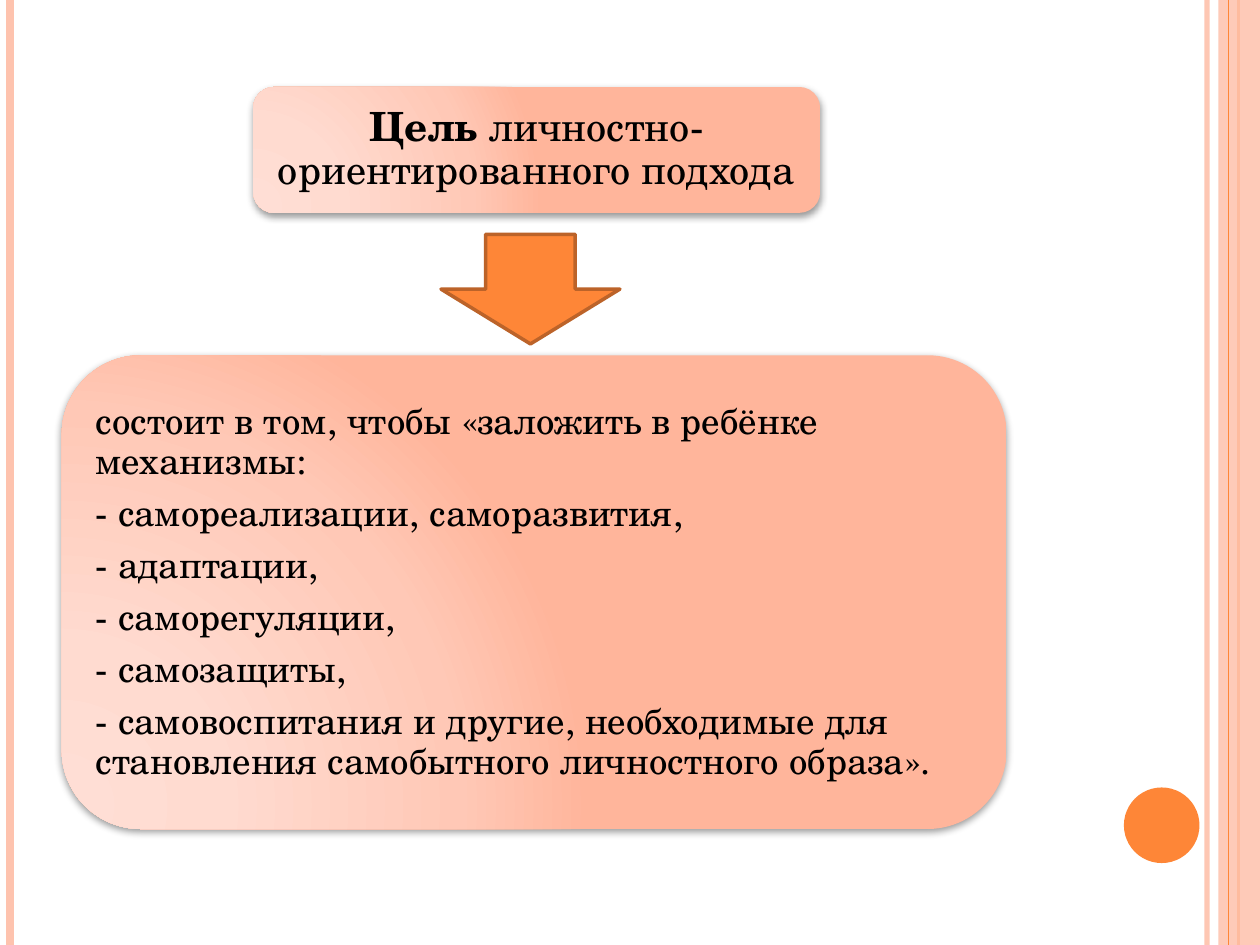
from dataclasses import dataclass

from lxml.etree import SubElement
from pptx import Presentation
from pptx.dml.color import RGBColor
from pptx.enum.shapes import MSO_CONNECTOR, MSO_SHAPE as Preset
from pptx.enum.text import MSO_ANCHOR, PP_ALIGN as Align
from pptx.oxml.ns import qn
from pptx.util import Inches, Pt


@dataclass(frozen=True)
class Theme:
    font: str = "TeX Gyre Schola"
    text: str = "000000"
    shadow: str = "000000"
    orange: str = "FE8637"
    outline: str = "BC6329"
    pink: str = "FEC3AE"
    gradient: tuple = ((0, "FFDED5"), (30, "FFDBD0"), (75, "FFC8B6"), (100, "FFB59B"))
    heading_size: float = 23
    body_size: float = 21
    line_spacing: float = 0.9
    space_after: float = 7.1


@dataclass(frozen=True)
class Box:
    left: float
    top: float
    width: float
    height: float

    def lengths(self) -> list:
        return [Inches(v) for v in (self.left, self.top, self.width, self.height)]


@dataclass(frozen=True)
class Stripe:
    x: float
    color: str
    width: float
    opacity: int = 100


@dataclass(frozen=True)
class Panel:
    box: Box
    text_box: Box
    inset: float
    paragraphs: list
    size: float
    align: Align


THEME = Theme()
SLIDE_WIDTH, SLIDE_HEIGHT = 10, 7.5

STRIPES = [
    Stripe(9.58, THEME.pink, 3, 93),
    Stripe(0.08, THEME.pink, 4.5),
    Stripe(9.83, THEME.orange, 1.5),
]
INNER_STRIPE = Stripe(9.75, THEME.orange, 0.75)

# Each paragraph is a list of (text, bold) runs
HEADING = [[("Цель ", True), ("личностно-ориентированного подхода", False)]]
BODY = [[(line, False)] for line in (
    "состоит в том, чтобы «заложить в ребёнке механизмы:",
    "- самореализации, саморазвития,",
    "- адаптации,",
    "- саморегуляции,",
    "- самозащиты,",
    "- самовоспитания и другие, необходимые для становления самобытного личностного образа».",
)]

PANELS = [
    Panel(Box(2.01, 0.69, 4.5, 1), Box(2.06, 0.74, 4.4, 0.9), 0.1,
          HEADING, THEME.heading_size, Align.CENTER),
    Panel(Box(0.49, 2.82, 7.5, 3.76), Box(0.67, 3.01, 7.14, 3.39), 0.09,
          BODY, THEME.body_size, Align.LEFT),
]


def add_color(parent, color: str, opacity: int = 100) -> None:
    element = SubElement(parent, qn("a:srgbClr"), val=color)
    if opacity < 100:
        SubElement(element, qn("a:alpha"), val=str(opacity * 1000))


def set_opacity(fill_owner, opacity: int) -> None:
    color = fill_owner.find(".//" + qn("a:srgbClr"))
    SubElement(color, qn("a:alpha"), val=str(opacity * 1000))


def add_stripe(slide, stripe: Stripe) -> None:
    x = Inches(stripe.x)
    line = slide.shapes.add_connector(
        MSO_CONNECTOR.STRAIGHT, x, 0, x, Inches(SLIDE_HEIGHT))
    line.line.color.rgb = RGBColor.from_string(stripe.color)
    line.line.width = Pt(stripe.width)
    properties = line._element.spPr
    if stripe.opacity < 100:
        set_opacity(properties, stripe.opacity)
    SubElement(properties, qn("a:effectLst"))


def add_shape(slide, preset: Preset, box: Box, color: str = "", outline: str = "",
              outline_width: float = 0, opacity: int = 100):
    shape = slide.shapes.add_shape(preset, *box.lengths())
    shape.shadow.inherit = False
    if color:
        shape.fill.solid()
        shape.fill.fore_color.rgb = RGBColor.from_string(color)
        if opacity < 100:
            set_opacity(shape._element.spPr, opacity)
    if outline:
        shape.line.color.rgb = RGBColor.from_string(outline)
        shape.line.width = Pt(outline_width)
    else:
        shape.line.fill.background()
    return shape


def apply_radial_gradient(shape) -> None:
    shape.fill.gradient()
    gradient = shape._element.spPr.find(qn("a:gradFill"))
    for child in list(gradient):
        gradient.remove(child)
    stops = SubElement(gradient, qn("a:gsLst"))
    for position, color in THEME.gradient:
        add_color(SubElement(stops, qn("a:gs"), pos=str(position * 1000)), color)
    circle = SubElement(gradient, qn("a:path"), path="circle")
    SubElement(circle, qn("a:fillToRect"), l="5000", t="100000", r="120000", b="10000")


def apply_shadow(shape) -> None:
    effects = shape._element.spPr.find(qn("a:effectLst"))
    shadow = SubElement(effects, qn("a:outerShdw"), blurRad=str(Pt(4)), dist=str(Pt(2)),
                        dir="5400000", rotWithShape="0")
    add_color(shadow, THEME.shadow, 40)


def add_text(slide, box: Box, paragraphs: list, *, size: float, align: Align,
             inset: float) -> None:
    frame = slide.shapes.add_textbox(*box.lengths()).text_frame
    frame.word_wrap = True
    frame.vertical_anchor = MSO_ANCHOR.MIDDLE
    frame.margin_left = frame.margin_right = Inches(inset)
    frame.margin_top = frame.margin_bottom = Inches(inset)
    for index, runs in enumerate(paragraphs):
        paragraph = frame.add_paragraph() if index else frame.paragraphs[0]
        paragraph.alignment = align
        paragraph.line_spacing = THEME.line_spacing
        paragraph.space_after = Pt(THEME.space_after)
        for text, bold in runs:
            run = paragraph.add_run()
            run.text = text
            run.font.name = THEME.font
            run.font.size = Pt(size)
            run.font.bold = bold
            run.font.color.rgb = RGBColor.from_string(THEME.text)


def add_panel(slide, panel: Panel) -> None:
    shape = add_shape(slide, Preset.ROUNDED_RECTANGLE, panel.box)
    apply_radial_gradient(shape)
    apply_shadow(shape)
    add_text(slide, panel.text_box, panel.paragraphs, size=panel.size,
             align=panel.align, inset=panel.inset)


def main() -> None:
    presentation = Presentation()
    presentation.slide_width = Inches(SLIDE_WIDTH)
    presentation.slide_height = Inches(SLIDE_HEIGHT)
    slide = presentation.slides.add_slide(presentation.slide_layouts[6])

    # Side stripes and corner disc
    for stripe in STRIPES:
        add_stripe(slide, stripe)
    add_shape(slide, Preset.RECTANGLE, Box(9.67, 0, 0.33, SLIDE_HEIGHT),
              THEME.pink, opacity=87)
    add_stripe(slide, INNER_STRIPE)
    add_shape(slide, Preset.OVAL, Box(8.92, 6.25, 0.6, 0.6), THEME.orange)

    # Heading and body panels, joined by the arrow
    for panel in PANELS:
        add_panel(slide, panel)
    add_shape(slide, Preset.DOWN_ARROW, Box(3.5, 1.86, 1.42, 0.87),
              THEME.orange, THEME.outline, 2)

    presentation.save("out.pptx")


if __name__ == "__main__":
    main()
